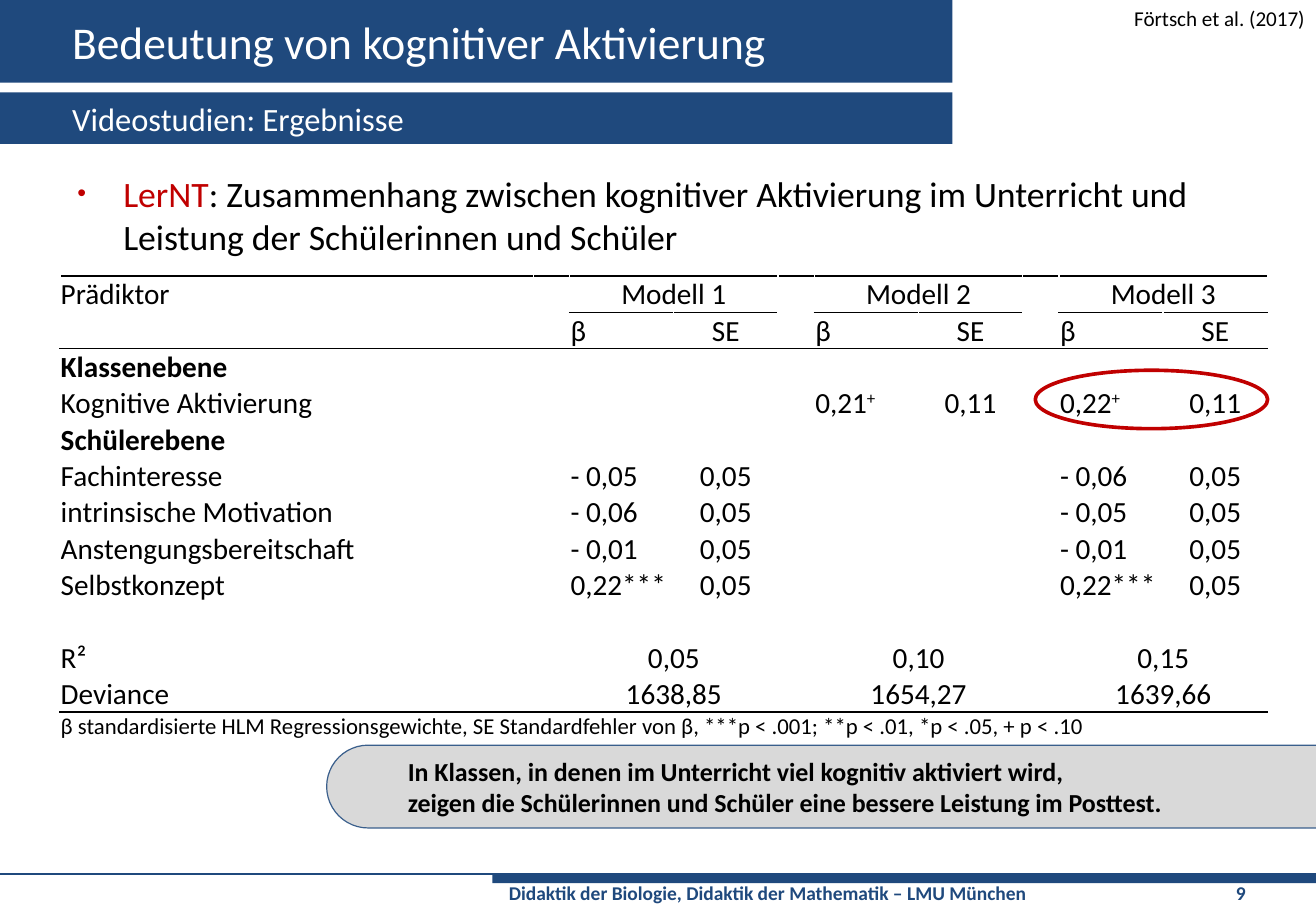
import pptx
import pptx.dml.color
import pptx.enum.shapes
import pptx.enum.text
import pptx.oxml
import pptx.oxml.ns
import pptx.util
from lxml import etree

Cm = pptx.util.Cm
Pt = pptx.util.Pt
RGBColor = pptx.dml.color.RGBColor
SHAPE = pptx.enum.shapes.MSO_SHAPE
ALIGN = pptx.enum.text.PP_ALIGN
ANCHOR = pptx.enum.text.MSO_ANCHOR
qn = pptx.oxml.ns.qn

BLUE = RGBColor(0x1F, 0x49, 0x7D)
OUTLINE_BLUE = RGBColor(0x3A, 0x5F, 0x8C)
RED = RGBColor(0xC0, 0x00, 0x00)
GREY = RGBColor(0xD9, 0xD9, 0xD9)
BLACK = RGBColor(0, 0, 0)
WHITE = RGBColor(0xFF, 0xFF, 0xFF)

FONT = "Calibri"
SLIDE_WIDTH, SLIDE_HEIGHT = 28.6, 20

MODEL_COLUMNS = (2, 5, 8)
COLUMN_WIDTHS = [10.29] + [0.79, 2.26, 2.27] * len(MODEL_COLUMNS)
ROW_HEIGHT, NOTE_HEIGHT = 0.79, 0.62

# Label, then one entry per model: a (β, SE) pair, one value across both, or None.
RESULTS = [
    ("Prädiktor", "Modell 1", "Modell 2", "Modell 3"),
    ("", ("β", "SE"), ("β", "SE"), ("β", "SE")),
    ("Klassenebene", None, None, None),
    ("Kognitive Aktivierung", None, ("0,21+", "0,11"), ("0,22+", "0,11")),
    ("Schülerebene", None, None, None),
    ("Fachinteresse", ("- 0,05", "0,05"), None, ("- 0,06", "0,05")),
    ("intrinsische Motivation", ("- 0,06", "0,05"), None, ("- 0,05", "0,05")),
    ("Anstengungsbereitschaft", ("- 0,01", "0,05"), None, ("- 0,01", "0,05")),
    ("Selbstkonzept", ("0,22***", "0,05"), None, ("0,22***", "0,05")),
    ("", None, None, None),
    ("R²", "0,05", "0,10", "0,15"),
    ("Deviance", "1638,85", "1654,27", "1639,66"),
]
TABLE_NOTE = ("β standardisierte HLM Regressionsgewichte, SE Standardfehler von β, "
              "***p < .001; **p < .01, *p < .05, + p < .10")
# Row edges that carry a black rule over the full width, counted from the top.
RULED_EDGES = (0, 2, len(RESULTS))


def add_run(paragraph, text, size, color=BLACK, bold=False):
    run = paragraph.add_run()
    run.text = text
    run.font.name = FONT
    run.font.size = Pt(size)
    run.font.bold = bold
    run.font.color.rgb = color
    return run


def add_filled_shape(slide, kind, box, fill=None, line=None, line_width=0.75):
    shape = slide.shapes.add_shape(kind, *map(Cm, box))
    shape.shadow.inherit = False
    if fill is None:
        shape.fill.background()
    else:
        shape.fill.solid()
        shape.fill.fore_color.rgb = fill
    if line is None:
        shape.line.fill.background()
    else:
        shape.line.color.rgb = line
        shape.line.width = Pt(line_width)
    return shape


def add_text_box(slide, box):
    """Add a wrapping text box and return its first paragraph."""
    frame = slide.shapes.add_textbox(*map(Cm, box)).text_frame
    frame.word_wrap = True
    return frame.paragraphs[0]


def add_banner(slide, box, text, size):
    banner = add_filled_shape(slide, SHAPE.RECTANGLE, box, BLUE)
    frame = banner.text_frame
    frame.margin_left = Cm(1.57)
    frame.vertical_anchor = ANCHOR.MIDDLE
    frame.paragraphs[0].alignment = ALIGN.LEFT
    add_run(frame.paragraphs[0], text, size, WHITE)


def add_citation(slide, box):
    paragraph = add_text_box(slide, box)
    paragraph.alignment = ALIGN.RIGHT
    add_run(paragraph, "Förtsch et al. (2017)", 13)


def add_finding(slide, box):
    paragraph = add_text_box(slide, box)
    properties = paragraph._p.get_or_add_pPr()
    properties.set("marL", str(Cm(1)))
    properties.set("indent", str(-Cm(1)))
    color = etree.SubElement(properties, qn("a:buClr"))
    etree.SubElement(color, qn("a:srgbClr"), val=str(RED))
    etree.SubElement(properties, qn("a:buSzPct"), val="70000")
    etree.SubElement(properties, qn("a:buFont"), typeface="Arial")
    etree.SubElement(properties, qn("a:buChar"), char="•")
    add_run(paragraph, "LerNT", 22, RED)
    add_run(paragraph, ": Zusammenhang zwischen kognitiver Aktivierung im Unterricht "
                       "und Leistung der Schülerinnen und Schüler", 22)


def set_borders(cell, top, bottom):
    properties = cell._tc.get_or_add_tcPr()
    sides = (("L", WHITE), ("R", WHITE), ("T", top), ("B", bottom))
    for position, (side, color) in enumerate(sides):
        line = etree.Element(qn(f"a:ln{side}"), w=str(Pt(1)))
        fill = etree.SubElement(line, qn("a:solidFill"))
        etree.SubElement(fill, qn("a:srgbClr"), val=str(color))
        properties.insert(position, line)


def edge_color(edge, column):
    under_model_name = edge == 1 and column % 3 != 1 and column > 0
    return BLACK if edge in RULED_EDGES or under_model_name else WHITE


def write_cell(cell, text, size=18, bold=False, centred=False):
    """Write the text, raising a plus sign that follows a number."""
    paragraph = cell.text_frame.paragraphs[0]
    paragraph.alignment = ALIGN.CENTER if centred else ALIGN.LEFT
    number = text.removesuffix("+")
    add_run(paragraph, number, size, bold=bold)
    if number != text:
        mark = add_run(paragraph, "+", size)
        mark._r.get_or_add_rPr().set("baseline", "30000")


def add_results_table(slide, left, top):
    row_heights = [ROW_HEIGHT] * len(RESULTS) + [NOTE_HEIGHT]
    table = slide.shapes.add_table(
        len(row_heights), len(COLUMN_WIDTHS), Cm(left), Cm(top),
        Cm(sum(COLUMN_WIDTHS)), Cm(sum(row_heights))).table
    table.first_row = False
    table.horz_banding = False
    for column, width in zip(table.columns, COLUMN_WIDTHS):
        column.width = Cm(width)
    for row_index, height in enumerate(row_heights):
        table.rows[row_index].height = Cm(height)
        for column_index in range(len(COLUMN_WIDTHS)):
            cell = table.cell(row_index, column_index)
            cell.fill.background()
            cell.vertical_anchor = ANCHOR.BOTTOM
            cell.margin_left = cell.margin_right = cell.margin_top = Cm(0.02)
            cell.margin_bottom = 0
            set_borders(cell, edge_color(row_index, column_index),
                        edge_color(row_index + 1, column_index))

    for row_index, (label, *models) in enumerate(RESULTS):
        if label:
            write_cell(table.cell(row_index, 0), label, bold=not any(models))
        for column, values in zip(MODEL_COLUMNS, models):
            first, second = (table.cell(row_index, column + step) for step in (0, 1))
            if isinstance(values, str):
                first.merge(second)
                write_cell(first, values, centred=True)
            elif values:
                write_cell(first, values[0])
                write_cell(second, values[1], centred=True)

    note = table.cell(len(RESULTS), 0)
    note.merge(table.cell(len(RESULTS), len(COLUMN_WIDTHS) - 1))
    write_cell(note, TABLE_NOTE, 14)


def add_conclusion(slide, box):
    callout = add_filled_shape(slide, SHAPE.ROUNDED_RECTANGLE, box, GREY, OUTLINE_BLUE)
    callout.adjustments[0] = 0.5
    frame = callout.text_frame
    frame.margin_left = Cm(1.5)
    frame.vertical_anchor = ANCHOR.MIDDLE
    paragraph = frame.paragraphs[0]
    paragraph.alignment = ALIGN.LEFT
    add_run(paragraph, "In Klassen, in denen im Unterricht viel kognitiv aktiviert wird,",
            16, bold=True)
    paragraph.add_line_break()
    add_run(paragraph, "zeigen die Schülerinnen und Schüler eine bessere Leistung im Posttest.",
            16, bold=True)


def add_footer(slide, left, top, width):
    rule = slide.shapes.add_connector(pptx.enum.shapes.MSO_CONNECTOR.STRAIGHT,
                                      0, Cm(top), Cm(left + width), Cm(top))
    rule.line.color.rgb = BLUE
    rule.line.width = Pt(1)
    etree.SubElement(rule._element.spPr, qn("a:effectLst"))
    add_filled_shape(slide, SHAPE.RECTANGLE, (left, top, width, 0.2), BLUE)
    texts = ((0.11, 14, "Didaktik der Biologie, Didaktik der Mathematik – LMU München"),
             (15.91, 1.5, "9"))
    for offset, text_width, text in texts:
        paragraph = add_text_box(slide, (left + offset, top + 0.02, text_width, 0.8))
        add_run(paragraph, text, 12, BLUE, bold=True)


def main():
    presentation = pptx.Presentation()
    presentation.slide_width = Cm(SLIDE_WIDTH)
    presentation.slide_height = Cm(SLIDE_HEIGHT)
    slide = presentation.slides.add_slide(presentation.slide_layouts[6])
    add_banner(slide, (0, 0, 20.7, 1.8), "Bedeutung von kognitiver Aktivierung", 28)
    add_banner(slide, (0, 2.01, 20.7, 1.12), "Videostudien: Ergebnisse", 20)
    add_citation(slide, (20.7, 0, 7.9, 1.55))
    add_footer(slide, 10.7, 19, 17.9)
    add_conclusion(slide, (7.1, 16.2, 23.14, 1.8))
    add_results_table(slide, 1.3, 6)
    add_finding(slide, (1.43, 3.61, 25.75, 2.16))
    add_filled_shape(slide, SHAPE.OVAL, (22.5, 8.05, 5.05, 1.27), line=RED, line_width=2.25)
    presentation.save("out.pptx")


if __name__ == "__main__":
    main()
